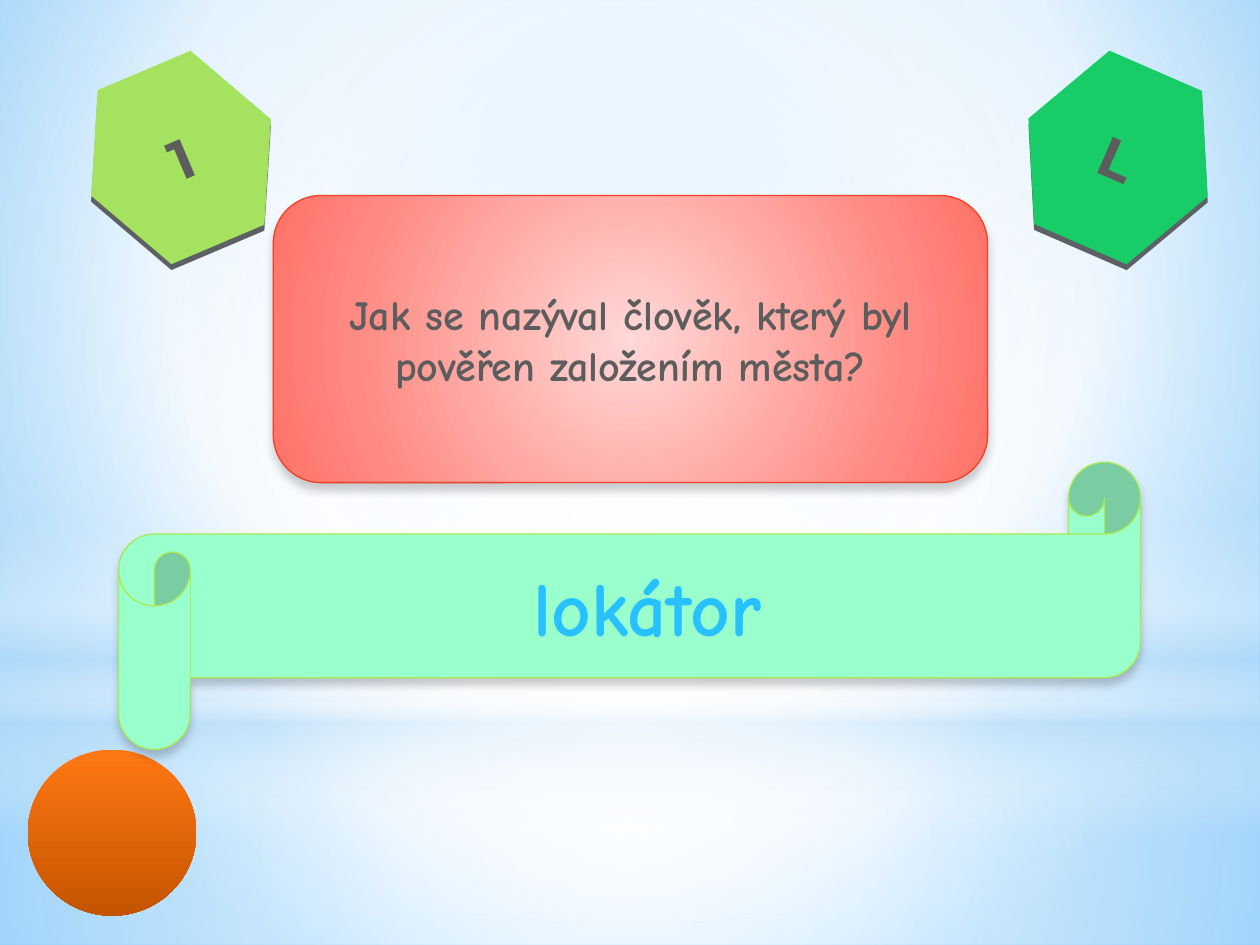
from lxml.etree import SubElement
from pptx import Presentation
from pptx.dml.color import RGBColor as RGB
from pptx.enum.shapes import MSO_SHAPE as Kind
from pptx.enum.text import MSO_ANCHOR as Anchor, PP_ALIGN as Align
from pptx.oxml.ns import qn
from pptx.util import Cm, Pt

WHITE = RGB(0xFF, 0xFF, 0xFF)
MIST = RGB(0xB4, 0xDC, 0xFA)
SKY = RGB(0x9E, 0xD5, 0xFF)
DEEP = RGB(0x5B, 0xB9, 0xFF)
LIME = RGB(0xA4, 0xE2, 0x5F)
GREEN = RGB(0x18, 0xCC, 0x68)
RIM = RGB(0x5D, 0x60, 0x64)
GREY = RGB(0x5D, 0x5D, 0x5D)
BLUE = RGB(0x28, 0xC1, 0xFF)
RED = RGB(0xF1, 0x41, 0x24)
MINT = RGB(0x99, 0xFF, 0xCC)
LEAF = RGB(0xA7, 0xEA, 0x52)
BLACK = RGB(0, 0, 0)
ROSE = [(0, RGB(0xFF, 0xD8, 0xD7), 100), (72, RGB(0xFF, 0x8A, 0x83), 100),
        (100, RGB(0xFF, 0x71, 0x67), 100)]
RUST = [(0, RGB(0xFF, 0x78, 0x13), 100), (100, RGB(0xC4, 0x54, 0x00), 100)]
MID = (50, 50, 50, 50)


def shade(fill, node, stops, rect=None):
    """Fill with (place, colour, opacity) stops: round about rect, else downward."""
    fill.gradient()
    grad = next(node.iter(qn("a:gradFill")))
    for part in list(grad):
        grad.remove(part)
    row = SubElement(grad, qn("a:gsLst"))
    for pos, tint, alpha in stops:
        stop = SubElement(row, qn("a:gs"), pos=str(pos * 1000))
        clr = SubElement(stop, qn("a:srgbClr"), val=str(tint))
        if alpha < 100:
            SubElement(clr, qn("a:alpha"), val=str(alpha * 1000))
    if rect:
        way = SubElement(grad, qn("a:path"), path="circle")
        sides = {k: str(v * 1000) for k, v in zip("ltrb", rect)}
        SubElement(way, qn("a:fillToRect"), **sides)
    else:
        SubElement(grad, qn("a:lin"), ang="5400000", scaled="0")


def add(kind, box, fill, line=None, rect=None, text=None, font=None, cast=False):
    """Add a shape; fill is a colour or a list of stops, box is in centimetres."""
    shape = slide.shapes.add_shape(kind, *[Cm(v) for v in box])
    shape.shadow.inherit = False
    if isinstance(fill, list):
        shade(shape.fill, shape._element, fill, rect)
    else:
        shape.fill.solid()
        shape.fill.fore_color.rgb = fill
    if line is None:
        shape.line.fill.background()
    else:
        shape.line.color.rgb = line
        shape.line.width = Pt(0.75)
    if cast:
        glow = next(shape._element.iter(qn("a:effectLst")))
        drop = SubElement(glow, qn("a:outerShdw"), blurRad=str(Pt(5)),
                          dist=str(Pt(4)), dir="5400000", rotWithShape="0")
        clr = SubElement(drop, qn("a:srgbClr"), val=str(BLACK))
        SubElement(clr, qn("a:alpha"), val="20000")
    if text:
        frame = shape.text_frame
        frame.word_wrap = True
        frame.vertical_anchor = Anchor.MIDDLE
        para = frame.paragraphs[0]
        para.alignment = Align.CENTER
        run = para.add_run()
        run.text = text
        for key, val in font.items():
            if key == "rgb":
                run.font.color.rgb = val
            else:
                setattr(run.font, key, val)
    return shape


deck = Presentation()
deck.slide_width, deck.slide_height = Cm(25.4), Cm(19.05)
slide = deck.slides.add_slide(deck.slide_layouts[6])

# Backdrop
shade(slide.background.fill, slide._element,
      [(0, SKY, 100), (60, WHITE, 100), (100, DEEP, 100)], (20, 10, 20, 60))
add(Kind.RECTANGLE, (0, 14.17, 25.4, 4.88),
    [(0, WHITE, 91), (37, WHITE, 76), (100, MIST, 79)], rect=MID)
add(Kind.RECTANGLE, (0, 0, 25.4, 14.17),
    [(0, WHITE, 89), (48, WHITE, 62), (100, MIST, 79)], rect=MID)
add(Kind.RECTANGLE, (0, 10.46, 25.4, 6.35),
    [(0, WHITE, 0), (29, WHITE, 30), (45, MIST, 40),
     (55, WHITE, 26), (65, MIST, 60), (100, WHITE, 0)])
add(Kind.OVAL, (0, 4.45, 25.4, 14.17), [(0, WHITE, 100), (56, WHITE, 0)], rect=MID)

# Hexagons, each on a dark rim
mark = {"name": "Montserrat", "size": Pt(32), "bold": True, "rgb": GREY}
for left, turn, tint, sign in [(20.57, 23.5, GREEN, "L"), (1.68, 337, LIME, "1")]:
    rim = add(Kind.HEXAGON, (left, 1.39, 3.94, 3.81), RIM)
    face = add(Kind.HEXAGON, (left, 1.27, 3.94, 3.81), tint, text=sign, font=mark)
    rim.rotation = face.rotation = turn

# Question, button and answer
add(Kind.ROUNDED_RECTANGLE, (5.51, 3.94, 14.4, 5.79), ROSE, RED, MID,
    "Jak se nazýval člověk, který byl pověřen založením města?",
    {"name": "Comic Neue", "size": Pt(24), "bold": True, "rgb": GREY}, True)
add(Kind.OVAL, (0.56, 15.11, 3.4, 3.35), RUST)
scroll = add(Kind.HORIZONTAL_SCROLL, (2.39, 9.32, 20.6, 5.79), MINT, LEAF, None, "lokátor",
             {"name": "Comic Neue", "size": Pt(44), "bold": True, "rgb": BLUE}, True)
scroll.adjustments[0] = 0.25

deck.save("out.pptx")
